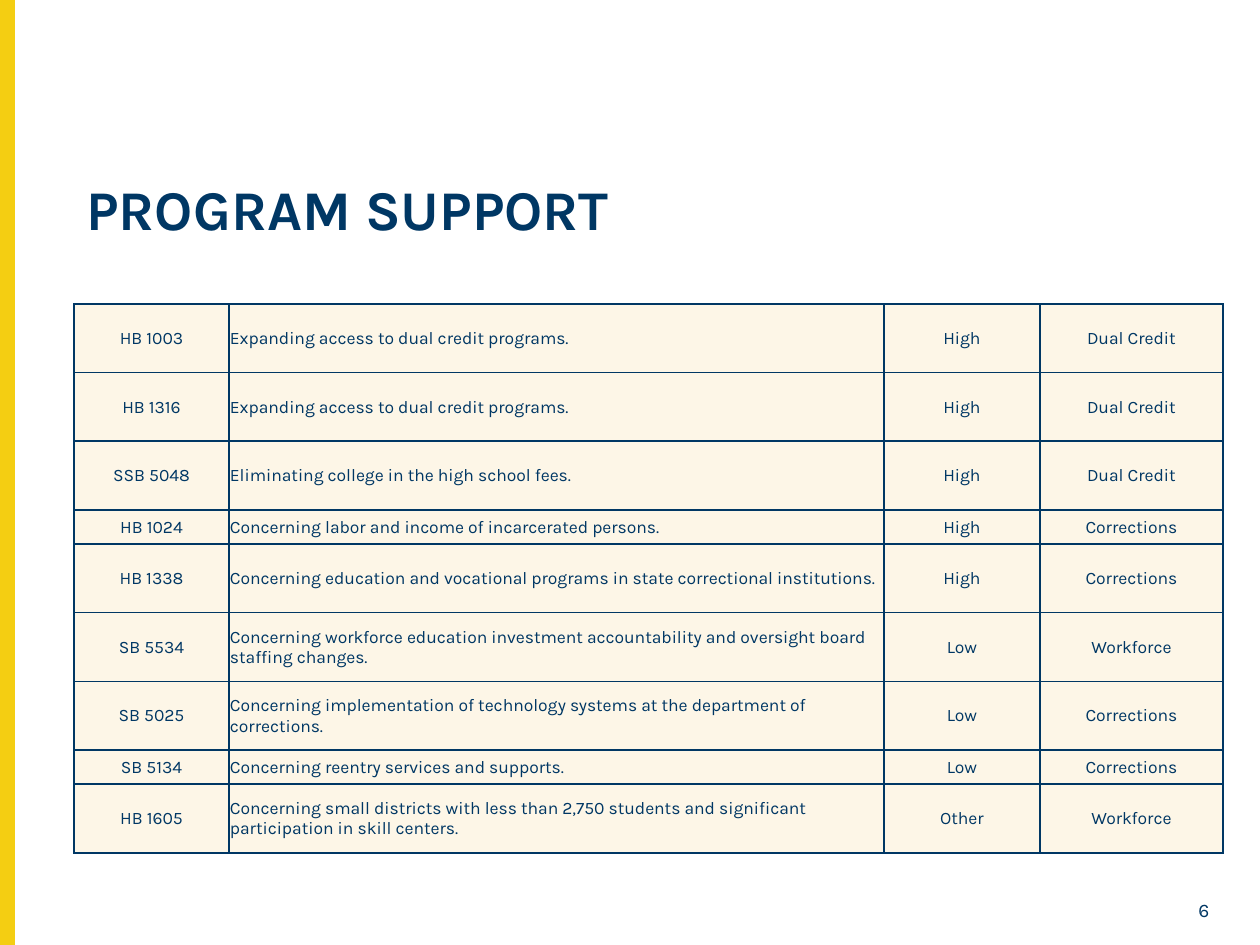
from lxml.etree import SubElement
from pptx import Presentation
from pptx.dml.color import RGBColor
from pptx.enum.shapes import MSO_SHAPE as Shape
from pptx.enum.text import MSO_ANCHOR as Anchor, PP_ALIGN as Align
from pptx.oxml.ns import qn
from pptx.util import Pt

PX = 914400 // 126
NAVY = RGBColor(0x00, 0x37, 0x64)
GOLD = RGBColor(0xF4, 0xCE, 0x12)
CREAM = RGBColor(0xFD, 0xF6, 0xE7)
FONT = "Karla"

TITLE = "PROGRAM SUPPORT"
PAGE = "6"
# Height units, bill, description, priority, topic
BILLS = [
    (2, "HB 1003", "Expanding access to dual credit programs.", "High", "Dual Credit"),
    (2, "HB 1316", "Expanding access to dual credit programs.", "High", "Dual Credit"),
    (2, "SSB 5048", "Eliminating college in the high school fees.", "High", "Dual Credit"),
    (1, "HB 1024", "Concerning labor and income of incarcerated persons.", "High", "Corrections"),
    (2, "HB 1338", "Concerning education and vocational programs in state correctional institutions.",
     "High", "Corrections"),
    (2, "SB 5534", "Concerning workforce education investment accountability and oversight board "
     "staffing changes.", "Low", "Workforce"),
    (2, "SB 5025", "Concerning implementation of technology systems at the department of corrections.",
     "Low", "Corrections"),
    (1, "SB 5134", "Concerning reentry services and supports.", "Low", "Corrections"),
    (2, "HB 1605", "Concerning small districts with less than 2,750 students and significant "
     "participation in skill centers.", "Other", "Workforce"),
]
WIDTHS = [155, 655, 156, 183]
ALIGNS = [Align.CENTER, Align.LEFT, Align.CENTER, Align.CENTER]
LEFT, TOP, HIGH = 74, 304, 549


def box(*at):
    return [n * PX for n in at]


def style(para, size, align, bold=False):
    para.alignment = align
    font = para.font
    font.name, font.size, font.bold = FONT, Pt(size), bold
    font.color.rgb = NAVY


def add_text(slide, at, text, size, align, anchor, top, bold=False):
    frame = slide.shapes.add_textbox(*box(*at)).text_frame
    frame.word_wrap = True
    frame.vertical_anchor = anchor
    frame.margin_top = top * PX
    frame.text = text
    para = frame.paragraphs[0]
    style(para, size, align, bold)
    return para


def add_edges(cell):
    """Draw all four borders; they must come before the fill in the XML."""
    props = cell._tc.get_or_add_tcPr()
    for i, side in enumerate(("lnL", "lnR", "lnT", "lnB")):
        line = SubElement(props, qn("a:" + side), w=str(Pt(1)))
        fill = SubElement(line, qn("a:solidFill"))
        SubElement(fill, qn("a:srgbClr"), val=str(NAVY))
        props.insert(i, line)


def add_bills(slide):
    at = box(LEFT, TOP, sum(WIDTHS), HIGH)
    table = slide.shapes.add_table(len(BILLS), len(WIDTHS), *at).table
    table.first_row = table.horz_banding = False
    for col, width in zip(table.columns, WIDTHS):
        col.width = width * PX
    total = sum(bill[0] for bill in BILLS)
    for row, (units, *texts) in zip(table.rows, BILLS):
        row.height = HIGH * PX * units // total
        for cell, text, align in zip(row.cells, texts, ALIGNS):
            cell.text = text
            cell.vertical_anchor = Anchor.MIDDLE
            cell.margin_left = cell.margin_right = cell.margin_top = PX
            cell.margin_bottom = 0
            cell.fill.solid()
            cell.fill.fore_color.rgb = CREAM
            add_edges(cell)
            style(cell.text_frame.paragraphs[0], 10, align)


def main():
    deck = Presentation()
    deck.slide_width, deck.slide_height = box(1260, 945)
    slide = deck.slides.add_slide(deck.slide_layouts[6])

    bar = slide.shapes.add_shape(Shape.RECTANGLE, *box(0, 0, 14, 945))
    bar.shadow.inherit = False
    bar.fill.solid()
    bar.fill.fore_color.rgb = bar.line.color.rgb = GOLD
    bar.line.width = Pt(1)

    title = add_text(slide, (LEFT, 171, 1149, 93), TITLE, 32, Align.LEFT, Anchor.TOP, 11, True)
    title.line_spacing = 0.9
    add_text(slide, (1158, 893, 64, 33), PAGE, 11, Align.RIGHT, Anchor.MIDDLE, 6)
    add_bills(slide)
    deck.save("out.pptx")


if __name__ == "__main__":
    main()
